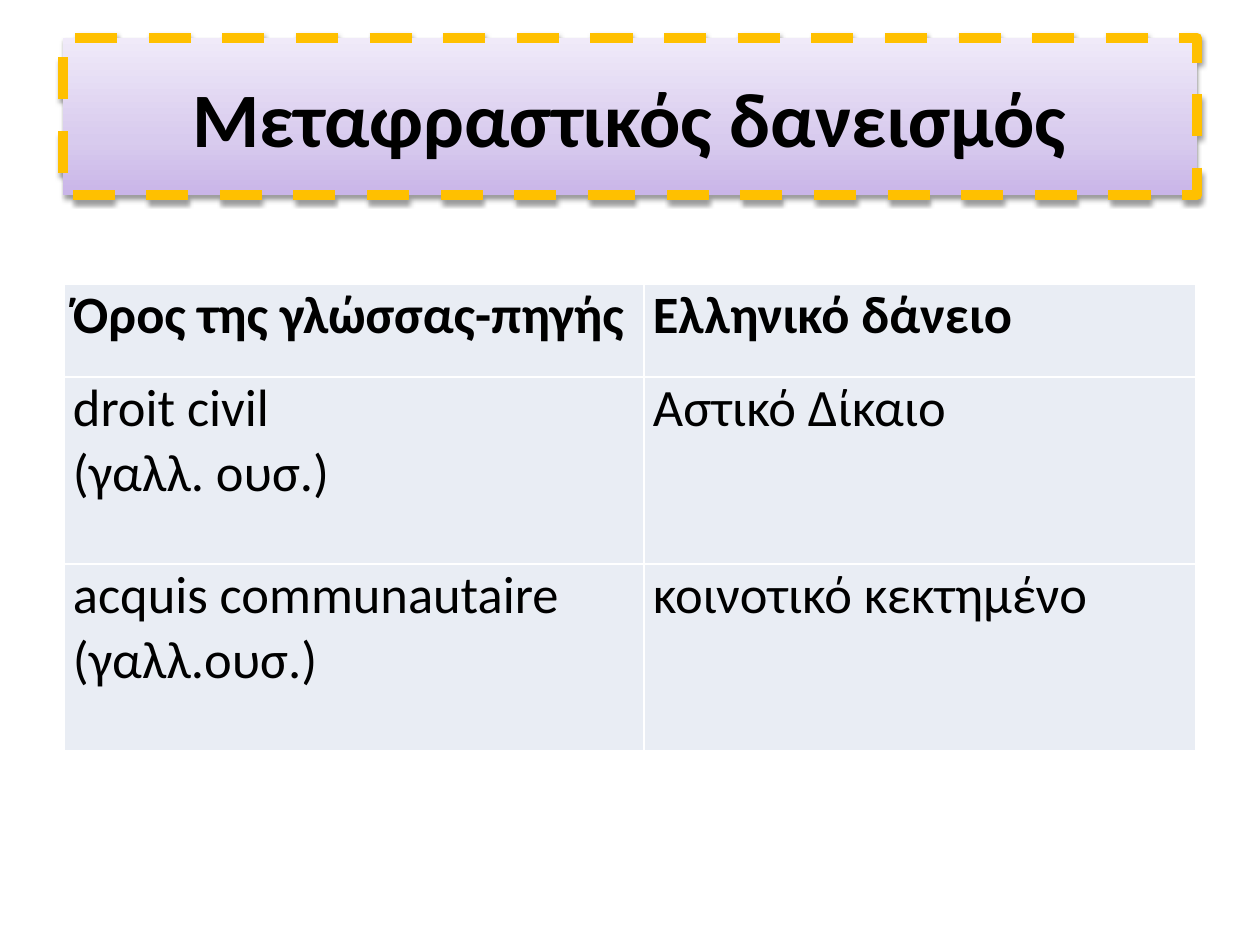
from copy import deepcopy
from dataclasses import dataclass

from lxml import etree
from pptx import Presentation
from pptx import util as u
from pptx.dml.color import RGBColor
from pptx.enum import dml, shapes, text
from pptx.oxml.ns import qn

PX = 914400 // 126


@dataclass(frozen=True)
class Theme:
    font: str = "Calibri"
    ink: str = "000000"
    frame: str = "FFC000"
    cell: str = "E9EDF4"
    border: str = "FFFFFF"
    gradient: tuple = ((0, "C9B5E8"), (35, "D8CBEE"), (100, "F0EAF9"))
    title_size: int = 44
    body_size: int = 30


THEME = Theme()
ROWS = (
    ("Όρος της γλώσσας-πηγής", "Ελληνικό δάνειο"),
    ("droit civil\n(γαλλ. ουσ.)", "Αστικό Δίκαιο"),
    ("acquis communautaire (γαλλ.ουσ.)", "κοινοτικό κεκτημένο"),
)


def px(n):
    return u.Emu(n * PX)


def rgb(color):
    return RGBColor.from_string(color)


def add_child(parent, tag, **attrs):
    return etree.SubElement(parent, qn(tag), {k: str(v) for k, v in attrs.items()})


def add_text(p, words, size, bold):
    for i, line in enumerate(words.split("\n")):
        if i:
            p.add_line_break()
        r = p.add_run()
        r.text = line
        r.font.name = THEME.font
        r.font.size = u.Pt(size)
        r.font.bold = bold
        r.font.color.rgb = rgb(THEME.ink)


def fill_gradient(sp):
    sp.fill.gradient()
    sp.fill.gradient_angle = 90
    stop_list = sp.element.spPr.find(".//" + qn("a:gsLst"))
    stop_list.append(deepcopy(stop_list[0]))
    for stop, (position, color) in zip(sp.fill.gradient_stops, THEME.gradient):
        stop.position = position / 100
        stop.color.rgb = rgb(color)


def add_shadow(sp):
    sp.shadow.inherit = False
    effects = sp.element.spPr.find(qn("a:effectLst"))
    shadow = add_child(effects, "a:outerShdw", blurRad=u.Pt(3.1), dist=u.Pt(1.6),
                       dir=90 * 60000, rotWithShape=0)
    color = add_child(shadow, "a:srgbClr", val=THEME.ink)
    add_child(color, "a:alpha", val=38000)


def add_title(slide, words, left, top, width, height):
    sp = slide.shapes.add_shape(shapes.MSO_SHAPE.RECTANGLE,
                                px(left), px(top), px(width), px(height))
    fill_gradient(sp)
    sp.line.color.rgb = rgb(THEME.frame)
    sp.line.width = u.Pt(6)
    sp.line.dash_style = dml.MSO_LINE.DASH
    add_shadow(sp)
    tf = sp.text_frame
    tf.word_wrap = True
    tf.vertical_anchor = text.MSO_ANCHOR.MIDDLE
    p = tf.paragraphs[0]
    p.alignment = text.PP_ALIGN.CENTER
    add_text(p, words, THEME.title_size, True)


def style_cell(cell):
    cell.margin_left = cell.margin_right = px(9)
    cell.margin_top = cell.margin_bottom = 0
    tc_pr = cell._tc.get_or_add_tcPr()
    for side in "LRTB":
        border = add_child(tc_pr, f"a:ln{side}", w=u.Pt(1))
        add_child(add_child(border, "a:solidFill"), "a:srgbClr", val=THEME.border)
    cell.fill.solid()
    cell.fill.fore_color.rgb = rgb(THEME.cell)


def add_terms(slide, left, top, widths, heights):
    table = slide.shapes.add_table(len(heights), len(widths), px(left), px(top),
                                   px(sum(widths)), px(sum(heights))).table
    for column, width in zip(table.columns, widths):
        column.width = px(width)
    for i, (row, height) in enumerate(zip(table.rows, heights)):
        row.height = px(height)
        for j, (cell, words) in enumerate(zip(row.cells, ROWS[i])):
            style_cell(cell)
            p = cell.text_frame.paragraphs[0]
            left_aligned = i > 0 and j == 0
            p.alignment = text.PP_ALIGN.LEFT if left_aligned else text.PP_ALIGN.JUSTIFY
            p.space_before = p.space_after = u.Pt(3)
            add_text(p, words, THEME.body_size, i == 0)


def main():
    prs = Presentation()
    prs.slide_width, prs.slide_height = px(1260), px(945)
    slide = prs.slides.add_slide(prs.slide_layouts[6])
    add_title(slide, "Μεταφραστικός δανεισμός", 63, 38, 1134, 157)
    add_terms(slide, 64, 284, (580, 552), (93, 187, 187))
    prs.save("out.pptx")


if __name__ == "__main__":
    main()
